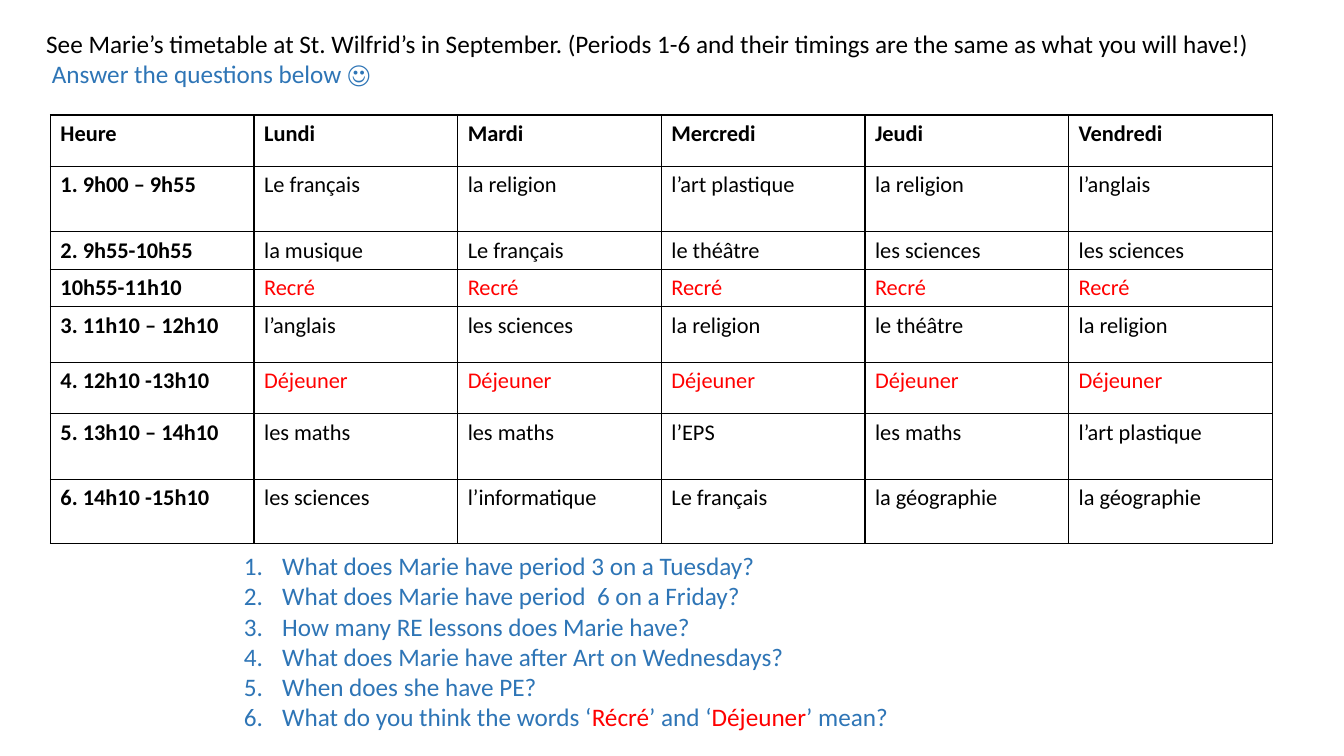
from dataclasses import dataclass
from typing import Any

from lxml.etree import SubElement
from pptx import Presentation
from pptx.dml.color import RGBColor as Color
from pptx.enum.text import MSO_AUTO_SIZE as AutoSize
from pptx.oxml.ns import qn
from pptx.util import Emu, Pt

EMU_PER_PX = 9144


def px(length: int) -> Emu:
    return Emu(length * EMU_PER_PX)


@dataclass(frozen=True)
class Theme:
    font: str = "Calibri"
    black: str = "000000"
    red: str = "FF0000"
    blue: str = "2E75B6"
    table_size: int = 16
    text_size: int = 18
    border_width: int = 1


THEME = Theme()


@dataclass(frozen=True)
class Span:
    text: str
    color: str = THEME.black
    size: int = THEME.text_size
    bold: bool = False


@dataclass(frozen=True)
class TextBlock:
    left: int
    top: int
    width: int
    height: int
    lines: list[list[Span]]
    frame_format: dict[str, Any]
    numbered: bool = False


@dataclass(frozen=True)
class TimetableRow:
    height: int
    time: str
    lessons: list[str]
    color: str = THEME.black
    bold: bool = False


TABLE_LEFT, TABLE_TOP, COLUMN_WIDTH = 50, 114, 202
NUMBER_INDENT = 38

TIMETABLE = [
    TimetableRow(51, "Heure", ["Lundi", "Mardi", "Mercredi", "Jeudi", "Vendredi"], bold=True),
    TimetableRow(65, "1. 9h00 – 9h55",
                 ["Le français", "la religion", "l’art plastique", "la religion", "l’anglais"]),
    TimetableRow(37, "2. 9h55-10h55",
                 ["la musique", "Le français", "le théâtre", "les sciences", "les sciences"]),
    TimetableRow(37, "10h55-11h10", ["Recré"] * 5, THEME.red),
    TimetableRow(55, "3. 11h10 – 12h10",
                 ["l’anglais", "les sciences", "la religion", "le théâtre", "la religion"]),
    TimetableRow(51, "4. 12h10 -13h10", ["Déjeuner"] * 5, THEME.red),
    TimetableRow(65, "5. 13h10 – 14h10",
                 ["les maths", "les maths", "l’EPS", "les maths", "l’art plastique"]),
    TimetableRow(64, "6. 14h10 -15h10",
                 ["les sciences", "l’informatique", "Le français", "la géographie", "la géographie"]),
]

QUESTIONS = [
    "What does Marie have period 3 on a Tuesday?",
    "What does Marie have period  6 on a Friday?",
    "How many RE lessons does Marie have?",
    "What does Marie have after Art on Wednesdays?",
    "When does she have PE?",
]
WORDS_QUESTION = [
    Span("What do you think the words ‘", THEME.blue),
    Span("Récré", THEME.red),
    Span("’ and ‘", THEME.blue),
    Span("Déjeuner", THEME.red),
    Span("’ mean?", THEME.blue),
]

BLOCKS = [
    TextBlock(
        232, 511, 1015, 252,
        [[Span(question, THEME.blue)] for question in QUESTIONS] + [WORDS_QUESTION],
        {"word_wrap": True, "auto_size": AutoSize.SHAPE_TO_FIT_TEXT, "margin_top": px(35)},
        numbered=True,
    ),
    TextBlock(
        36, 23, 1228, 71,
        [
            [Span("See Marie’s timetable at St. Wilfrid’s in September. "
                  "(Periods 1-6 and their timings are the same as what you will have!)")],
            [Span(" Answer the questions below ☺", THEME.blue)],
        ],
        {"word_wrap": False, "auto_size": AutoSize.SHAPE_TO_FIT_TEXT},
    ),
]


def set_values(target: Any, values: dict[str, Any]) -> None:
    for name, value in values.items():
        setattr(target, name, value)


def write_spans(para: Any, spans: list[Span]) -> None:
    for span in spans:
        run = para.add_run()
        run.text = span.text
        set_values(run.font, {"name": THEME.font, "size": Pt(span.size), "bold": span.bold})
        run.font.color.rgb = Color.from_string(span.color)


def number_paragraph(para: Any) -> None:
    properties = para._p.get_or_add_pPr()
    properties.set("marL", str(px(NUMBER_INDENT)))
    properties.set("indent", str(-px(NUMBER_INDENT)))
    SubElement(properties, qn("a:buFont"), typeface="+mj-lt")
    SubElement(properties, qn("a:buAutoNum"), type="arabicPeriod")


def draw_text(page: Any, block: TextBlock) -> None:
    box = page.shapes.add_textbox(*map(px, (block.left, block.top, block.width, block.height)))
    frame = box.text_frame
    set_values(frame, block.frame_format)
    for index, spans in enumerate(block.lines):
        para = frame.add_paragraph() if index else frame.paragraphs[0]
        if block.numbered:
            number_paragraph(para)
        write_spans(para, spans)


def border_cell(cell: Any) -> None:
    properties = cell._tc.get_or_add_tcPr()
    for side in ("lnL", "lnR", "lnT", "lnB"):
        line = SubElement(properties, qn(f"a:{side}"), w=str(Pt(THEME.border_width)))
        fill = SubElement(line, qn("a:solidFill"))
        SubElement(fill, qn("a:srgbClr"), val=THEME.black)


def draw_timetable(page: Any, rows: list[TimetableRow]) -> None:
    column_count = 1 + len(rows[0].lessons)
    width, height = column_count * COLUMN_WIDTH, sum(row.height for row in rows)
    table = page.shapes.add_table(
        len(rows), column_count, *map(px, (TABLE_LEFT, TABLE_TOP, width, height))
    ).table
    set_values(table, {"first_row": False, "horz_banding": False})
    for column in table.columns:
        column.width = px(COLUMN_WIDTH)
    for row_index, row in enumerate(rows):
        table.rows[row_index].height = px(row.height)
        spans = [Span(row.time, size=THEME.table_size, bold=True)]
        spans += [Span(lesson, row.color, THEME.table_size, row.bold) for lesson in row.lessons]
        for column_index, span in enumerate(spans):
            cell = table.cell(row_index, column_index)
            border_cell(cell)
            cell.fill.background()
            write_spans(cell.text_frame.paragraphs[0], [span])


def main() -> None:
    deck = Presentation()
    set_values(deck, {"slide_width": px(1333), "slide_height": px(750)})
    page = deck.slides.add_slide(deck.slide_layouts[6])
    draw_timetable(page, TIMETABLE)
    for block in BLOCKS:
        draw_text(page, block)
    deck.save("out.pptx")


if __name__ == "__main__":
    main()
